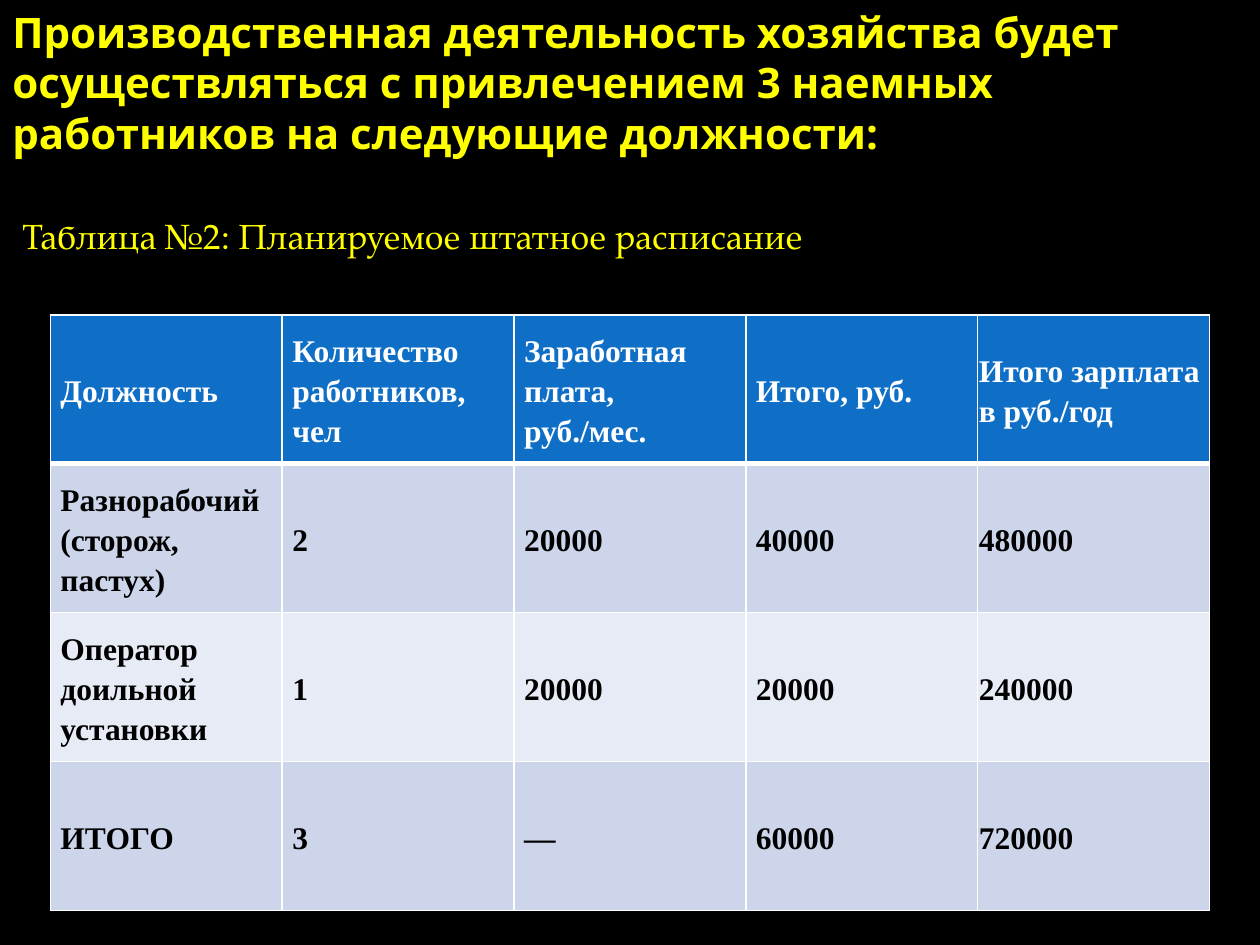
from pptx import Presentation
from pptx.dml.color import RGBColor
from pptx.enum.text import MSO_ANCHOR as Anchor
from pptx.oxml import parse_xml
from pptx.oxml.ns import nsdecls
from pptx.util import Inches, Pt

WIDTH, HEIGHT = Inches(10), Inches(7.5)
YELLOW, WHITE, BLACK = "FFFF00", "FFFFFF", "000000"
HEADER_FILL, BAND_FILLS = "0F6FC6", ("CCD5EA", "E7EBF5")

TITLE = ("Производственная деятельность хозяйства будет осуществляться "
         "с привлечением 3 наемных работников на следующие должности:")
CAPTION = "Таблица №2: Планируемое штатное расписание"
STAFF = [
    ("Должность", "Количество работников, чел", "Заработная плата, руб./мес.",
     "Итого, руб.", "Итого зарплата в руб./год"),
    ("Разнорабочий (сторож, пастух)", "2", "20000", "40000", "480000"),
    ("Оператор доильной установки", "1", "20000", "20000", "240000"),
    ("ИТОГО", "3", "—", "60000", "720000"),
]


def color(value):
    return RGBColor.from_string(value)


def share(left, top, width, height):
    """Turn shares of the slide into a box of lengths."""
    return (int(WIDTH * left), int(HEIGHT * top),
            int(WIDTH * width), int(HEIGHT * height))


def set_margins(target, left, top, right, bottom):
    target.margin_left, target.margin_top = Inches(left), Inches(top)
    target.margin_right, target.margin_bottom = Inches(right), Inches(bottom)


def format_text(paragraph, font_name, size, text_color, bold=False):
    for run in paragraph.runs:
        font = run.font
        font.name, font.size, font.bold = font_name, Pt(size), bold
        font.color.rgb = color(text_color)


def add_text(slide, box, text, margins, anchor):
    text_frame = slide.shapes.add_textbox(*box).text_frame
    text_frame.word_wrap = True
    text_frame.vertical_anchor = anchor
    set_margins(text_frame, *margins)
    text_frame.text = text
    return text_frame.paragraphs[0]


def add_title(slide, box):
    paragraph = add_text(slide, box, TITLE, (0.1, 0.05, 0.1, 0), Anchor.BOTTOM)
    format_text(paragraph, "Open Sans", 24, YELLOW, bold=True)


def add_caption(slide, box):
    paragraph = add_text(slide, box, CAPTION, (0.18, 0.05, 0.1, 0.05), Anchor.TOP)
    paragraph.space_before = Pt(4)
    format_text(paragraph, "TeX Gyre Pagella", 20, YELLOW)


def set_borders(cell, bottom_width):
    properties = cell._tc.get_or_add_tcPr()
    widths = {"lnL": 1, "lnR": 1, "lnT": 1, "lnB": bottom_width}
    for index, (side, width) in enumerate(widths.items()):
        properties.insert(index, parse_xml(
            f'<a:{side} {nsdecls("a")} w="{Pt(width)}"><a:solidFill>'
            f'<a:srgbClr val="{WHITE}"/></a:solidFill></a:{side}>'))


def add_staff_table(slide, box):
    row_count, column_count = len(STAFF), len(STAFF[0])
    table = slide.shapes.add_table(row_count, column_count, *box).table
    for r, values in enumerate(STAFF):
        is_header = r == 0
        for c, value in enumerate(values):
            cell = table.cell(r, c)
            is_last = c == column_count - 1
            cell.text = value
            cell.vertical_anchor = Anchor.MIDDLE
            side, edge = (0.01, 0.01) if is_last else (0.08, 0.02)
            set_margins(cell, side, edge, side, edge)
            cell.fill.solid()
            cell.fill.fore_color.rgb = color(
                HEADER_FILL if is_header else BAND_FILLS[(r - 1) % 2])
            # The header is set off by a thicker rule on both cells' shared edge
            set_borders(cell, 3 if is_header else 1)
            if r == 1:
                cell._tc.tcPr.find("{*}lnT").set("w", str(Pt(3)))
            paragraph = cell.text_frame.paragraphs[0]
            paragraph.line_spacing = 1.15
            if is_header and is_last:
                paragraph.space_after = Pt(10)
            format_text(paragraph, "Times New Roman", 18,
                        WHITE if is_header else BLACK, bold=True)


def main():
    presentation = Presentation()
    presentation.slide_width, presentation.slide_height = WIDTH, HEIGHT
    slide = presentation.slides.add_slide(presentation.slide_layouts[6])
    slide.background.fill.solid()
    slide.background.fill.fore_color.rgb = color(BLACK)

    add_title(slide, share(0, 0, 1, 1 / 6))
    add_caption(slide, share(0, 0.22, 1, 0.78))
    add_staff_table(slide, share(0.04, 1 / 3, 0.92, 0.63))

    presentation.save("out.pptx")


if __name__ == "__main__":
    main()
